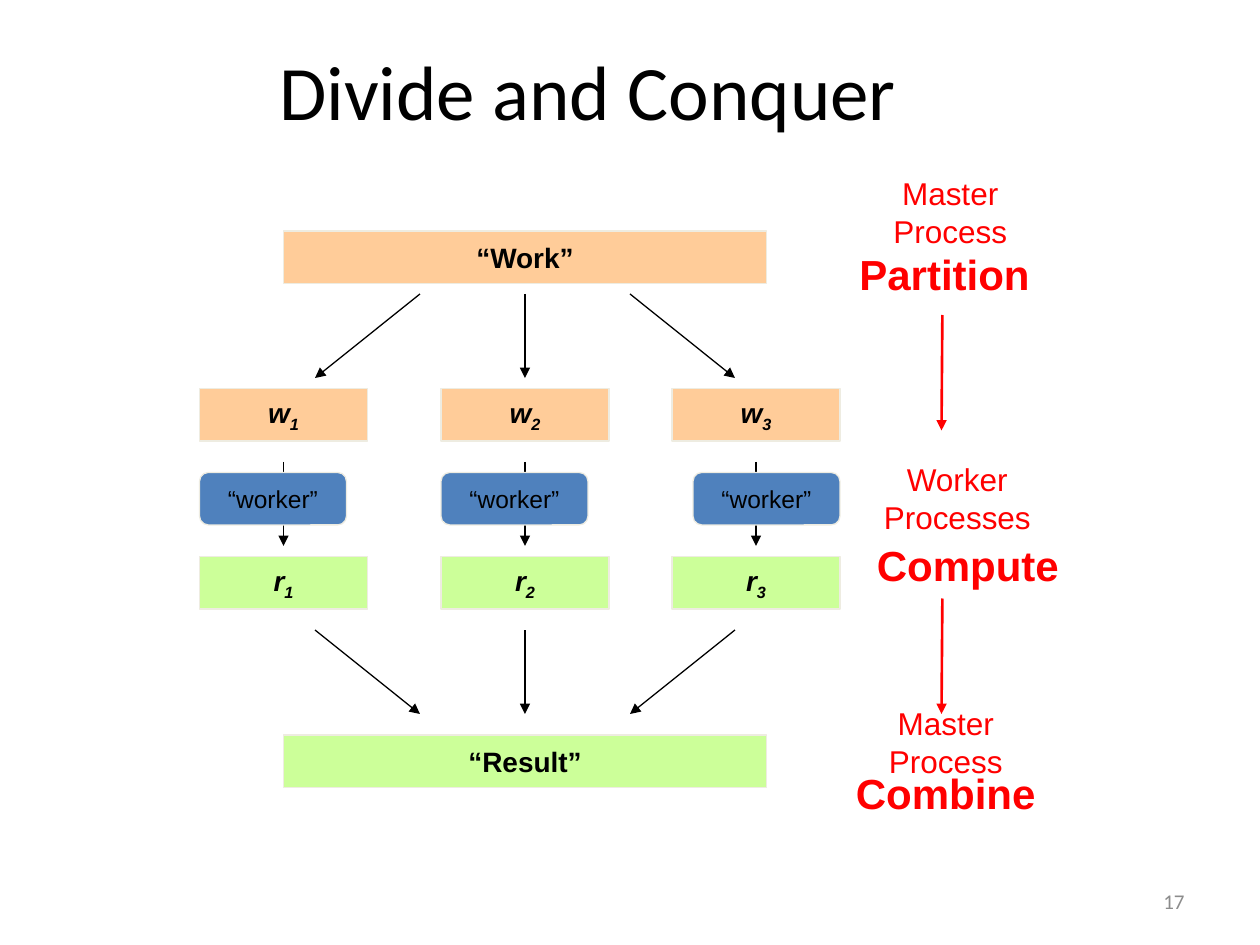
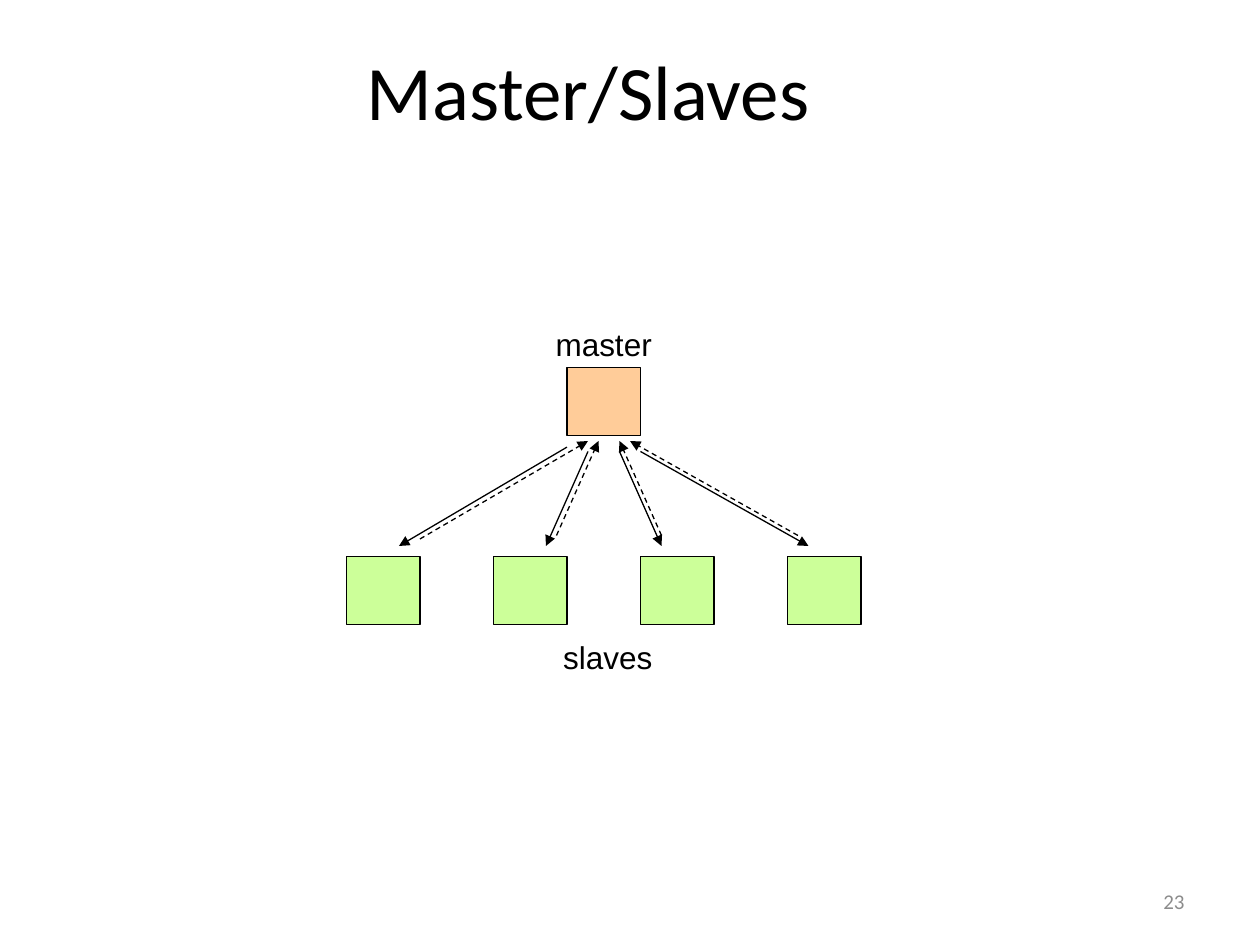
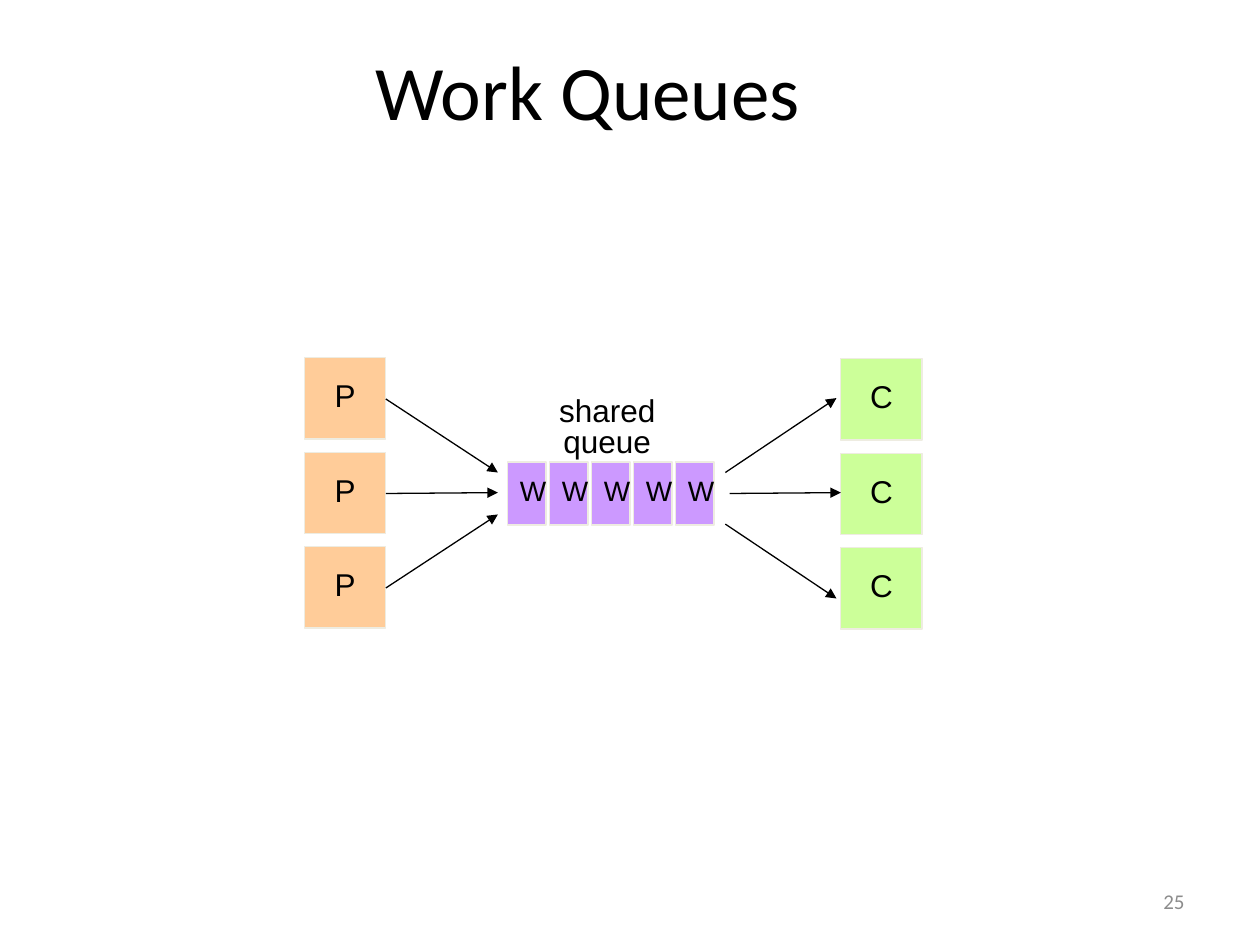
import pptx
import pptx.dml.color
import pptx.enum.dml
import pptx.enum.shapes
import pptx.enum.text
import pptx.oxml.ns
import pptx.util
from lxml import etree

Pt = pptx.util.Pt
SHAPE = pptx.enum.shapes.MSO_SHAPE
ALIGN = pptx.enum.text.PP_ALIGN
MIDDLE = pptx.enum.text.MSO_ANCHOR.MIDDLE
TOP = pptx.enum.text.MSO_ANCHOR.TOP

BLACK = "000000"
RED = "FF0000"
GREY = "8C8C8C"
PALE = "EEECE1"
ORANGE = "FFCC99"
GREEN = "CCFF99"
BLUE = "4F81BD"
PURPLE = "CC99FF"


def rgb(value):
    return pptx.dml.color.RGBColor.from_string(value)


def write(sp, text, size, color=BLACK, font="Arial", bold=False, italic=False,
          align=ALIGN.CENTER, anchor=MIDDLE, wrap=True, spacing=None):
    tf = sp.text_frame
    tf.text = text
    tf.word_wrap = wrap
    tf.vertical_anchor = anchor
    for p in tf.paragraphs:
        p.alignment = align
        if spacing:
            p.line_spacing = spacing
        for r in p.runs:
            r.font.name = font
            r.font.size = Pt(size)
            r.font.color.rgb = rgb(color)
            r.font.bold = bold
            r.font.italic = italic


def add_label(slide, box, text, size, **style):
    sp = slide.shapes.add_textbox(*map(Pt, box))
    write(sp, text, size, **style)
    return sp


def add_box(slide, box, fill, line=PALE, kind=SHAPE.RECTANGLE):
    sp = slide.shapes.add_shape(kind, *map(Pt, box))
    sp.shadow.inherit = False
    sp.fill.solid()
    sp.fill.fore_color.rgb = rgb(fill)
    sp.line.color.rgb = rgb(line)
    sp.line.width = Pt(0.75)
    return sp


def add_subscript(sp, index):
    p = sp.text_frame.paragraphs[0]
    base = p.runs[0].font
    r = p.add_run()
    r.text = str(index)
    r.font.name, r.font.size = base.name, base.size
    r.font.bold, r.font.italic = base.bold, base.italic
    r.font.color.rgb = base.color.rgb
    r.font._element.set("baseline", "-25000")


def add_arrow(slide, start, end, color=BLACK, width=0.75, dashed=False):
    sp = slide.shapes.add_connector(
        pptx.enum.shapes.MSO_CONNECTOR.STRAIGHT, *map(Pt, (*start, *end)))
    sp.line.color.rgb = rgb(color)
    sp.line.width = Pt(width)
    if dashed:
        sp.line.dash_style = pptx.enum.dml.MSO_LINE.DASH
    ln = sp.line._get_or_add_ln()
    etree.SubElement(ln, pptx.oxml.ns.qn("a:tailEnd"), type="triangle")
    etree.SubElement(sp._element.spPr, pptx.oxml.ns.qn("a:effectLst"))


def add_slide(prs, title, number):
    slide = prs.slides.add_slide(prs.slide_layouts[5])
    sp = slide.shapes.title
    sp.left, sp.top, sp.width, sp.height = map(Pt, (0, 12, 672, 78))
    write(sp, title, 44, font="Calibri")
    add_label(slide, (516, 500.5, 168, 29), str(number), 12, color=GREY,
              font="Calibri", align=ALIGN.RIGHT)
    return slide


def draw_work_flow(slide, left, top):
    columns = (0, 138, 270)
    workers = (0, 138, 282)
    middle = left + 186

    for text, y, fill in (("“Work”", 0, ORANGE), ("“Result”", 288, GREEN)):
        sp = add_box(slide, (left + 48, top + y, 276, 30), fill)
        write(sp, text, 16, bold=True)

    for letter, y, fill in (("w", 90, ORANGE), ("r", 186, GREEN)):
        for i, x in enumerate(columns, 1):
            sp = add_box(slide, (left + x, top + y, 96, 30), fill)
            write(sp, letter, 16, bold=True, italic=True)
            add_subscript(sp, i)

    for side in (-1, 0, 1):
        near, far = middle + 60 * side, middle + 120 * side
        add_arrow(slide, (near, top + 36), (far, top + 84))
        add_arrow(slide, (far, top + 228), (near, top + 276))

    for x, worker in zip(columns, workers):
        add_arrow(slide, (left + x + 48, top + 132), (left + x + 48, top + 180))
        sp = add_box(slide, (left + worker, top + 138, 84, 30), BLUE,
                     kind=SHAPE.ROUNDED_RECTANGLE)
        write(sp, "“worker”", 14)


def draw_stages(slide, left, top):
    roles = (("Master\nProcess", 23, 0, 80), ("Worker\nProcesses", 17.5, 163.5, 99),
             ("Master\nProcess", 20.5, 303, 80))
    steps = (("Partition", 4, 42.5, 113), ("Compute", 14, 208.5, 120),
             ("Combine", 2, 339, 118))
    for text, x, y, w in roles:
        add_label(slide, (left + x, top + y, w, 51), text, 18, color=RED,
                  anchor=TOP, wrap=False)
    for text, x, y, w in steps:
        add_label(slide, (left + x, top + y, w, 36.5), text, 24, color=RED,
                  bold=True, align=ALIGN.LEFT, anchor=TOP, wrap=False)
    for y in (84, 246):
        add_arrow(slide, (left + 58.5, top + y), (left + 58, top + y + 66),
                  color=RED, width=1.5)


def draw_master_slaves(slide, left, top):
    for i in range(4):
        add_box(slide, (left + 84 * i, top + 132, 42, 39), GREEN, BLACK)
    add_box(slide, (left + 126, top + 24, 42, 39), ORANGE, BLACK)

    for text, x, y, w in (("master", 72, 0, 150), ("slaves", 60, 179, 178.5)):
        add_label(slide, (left + x, top + y, w, 24.5), text, 18,
                  anchor=TOP, spacing=0.81)

    requests = ((126, 69.5, 30), (138, 72, 114), (156, 72, 180), (168, 72, 264))
    for x, y, end in requests:
        add_arrow(slide, (left + x, top + y), (left + end, top + 126))
    replies = ((42, 122, 138), (120, 120, 144), (180, 120, 156), (258, 120, 162))
    for x, y, end in replies:
        add_arrow(slide, (left + x, top + y), (left + end, top + 66), dashed=True)


def draw_work_queue(slide, left, top):
    for text, x, y, fill in (("P", 0, 0, ORANGE), ("C", 306.5, 0.5, GREEN)):
        for i in range(3):
            sp = add_box(slide, (left + x, top + y + 54 * i, 46.5, 46.5), fill)
            write(sp, text, 18, spacing=0.81)

    add_label(slide, (left + 116, top + 28, 114, 25), "shared queue", 18,
              wrap=False, spacing=0.81)
    for i in range(5):
        sp = add_box(slide, (left + 116 + 24 * i, top + 59.5, 22, 36), PURPLE)
        write(sp, "W", 16, align=ALIGN.LEFT, spacing=0.81)

    for start, end in ((23.5, 65.5), (77.5, 77), (131.5, 89.5)):
        add_arrow(slide, (left + 46.5, top + start), (left + 110.5, top + end))
    for x, start, end in ((240.5, 65.5, 23), (243, 77.5, 77), (240.5, 95, 137.5)):
        add_arrow(slide, (left + x, top + start), (left + x + 63.5, top + end))


def main():
    prs = pptx.Presentation()
    prs.slide_width, prs.slide_height = Pt(720), Pt(540)

    slide = add_slide(prs, "Divide and Conquer", 17)
    draw_work_flow(slide, 114, 132)
    draw_stages(slide, 480, 96)

    slide = add_slide(prs, "Master/Slaves", 23)
    draw_master_slaves(slide, 198, 186)

    slide = add_slide(prs, "Work Queues", 25)
    draw_work_queue(slide, 174, 204.5)

    prs.save("out.pptx")


if __name__ == "__main__":
    main()
